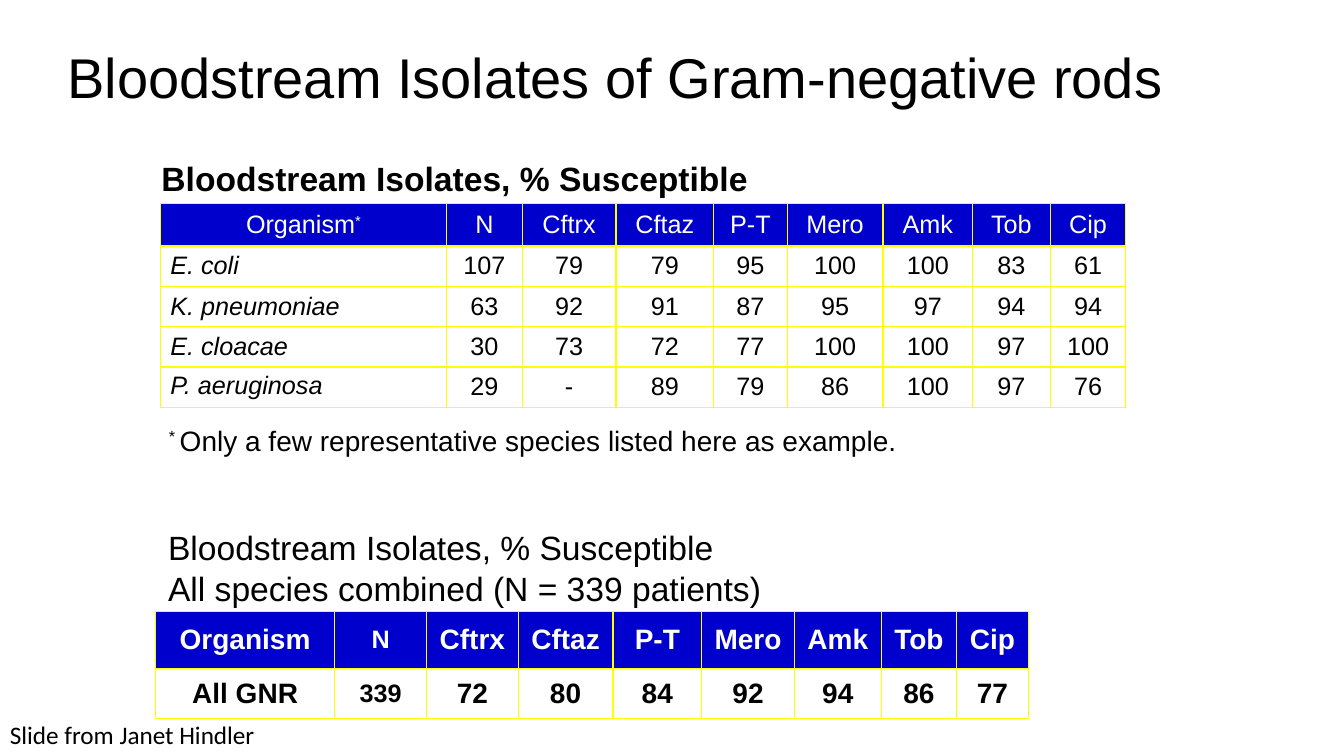
from dataclasses import dataclass

from pptx import Presentation
from pptx.dml.color import RGBColor
from pptx.enum.text import MSO_ANCHOR as Anchor, MSO_AUTO_SIZE as AutoSize, PP_ALIGN as Align
from pptx.oxml import parse_xml
from pptx.oxml.ns import nsdecls
from pptx.util import Pt


@dataclass(frozen=True)
class Theme:
    text: str = "000000"
    paper: str = "FFFFFF"
    header: str = "0000CC"
    border: str = "FFFF00"
    font: str = "Arial"
    credit_font: str = "Calibri"
    title_size: int = 40
    heading_size: int = 24
    large_size: int = 20
    normal_size: int = 18


DRUGS = ["Cftrx", "Cftaz", "P-T", "Mero", "Amk", "Tob", "Cip"]
SPECIES_ROWS = [
    ["Organism", "N", *DRUGS],
    ["E. coli", "107", "79", "79", "95", "100", "100", "83", "61"],
    ["K. pneumoniae", "63", "92", "91", "87", "95", "97", "94", "94"],
    ["E. cloacae", "30", "73", "72", "77", "100", "100", "97", "100"],
    ["P. aeruginosa", "29", "-", "89", "79", "86", "100", "97", "76"],
]
COMBINED_ROWS = [
    ["Organism", "N", *DRUGS],
    ["All GNR", "339", "72", "80", "84", "92", "94", "86", "77"],
]
SPECIES_WIDTHS = [204.5, 54, 67, 69.8, 52.6, 68.4, 64, 55.5, 54]
COMBINED_WIDTHS = [128.2, 65.5, 65.5, 67.7, 63.4, 66.2, 62, 54, 51.1]


def add_text(paragraph, text, *, size, font, color, bold=False, italic=False, raised=False):
    run = paragraph.add_run()
    run.text = text
    run.font.size = Pt(size)
    run.font.name = font
    run.font.bold = bold
    run.font.italic = italic
    run.font.color.rgb = RGBColor.from_string(color)
    if raised:
        run.font._element.set("baseline", "30000")


class SlideBuilder:
    def __init__(self, slide, theme):
        self.slide = slide
        self.theme = theme

    def style(self, size, **changes):
        return {"size": size, "font": self.theme.font, "color": self.theme.text, **changes}

    def title(self, text, left, top, width, height):
        shape = self.slide.shapes.title
        shape.left, shape.top, shape.width, shape.height = map(Pt, (left, top, width, height))
        frame = shape.text_frame
        frame.word_wrap = True
        frame.auto_size = AutoSize.NONE
        frame.vertical_anchor = Anchor.TOP
        paragraph = frame.paragraphs[0]
        paragraph.alignment = Align.LEFT
        paragraph.line_spacing = 1.0
        add_text(paragraph, text, **self.style(self.theme.title_size))

    def text_box(self, lines, left, top, width, height, size, align=Align.LEFT, wrap=False, mark="", **changes):
        shape = self.slide.shapes.add_textbox(Pt(left), Pt(top), Pt(width), Pt(height))
        frame = shape.text_frame
        frame.word_wrap = wrap
        frame.auto_size = AutoSize.SHAPE_TO_FIT_TEXT
        for index, line in enumerate(lines):
            paragraph = frame.add_paragraph() if index else frame.paragraphs[0]
            paragraph.alignment = align
            if mark:
                add_text(paragraph, mark, **self.style(size, raised=True, **changes))
            add_text(paragraph, line, **self.style(size, **changes))

    def border(self, cell):
        properties = cell._tc.get_or_add_tcPr()
        for index, side in enumerate(("lnL", "lnR", "lnT", "lnB")):
            properties.insert(index, parse_xml(
                f'<a:{side} {nsdecls("a")} w="{Pt(1)}"><a:solidFill>'
                f'<a:srgbClr val="{self.theme.border}"/></a:solidFill></a:{side}>'))

    def table(self, rows, left, top, widths, heights, text_style):
        shape = self.slide.shapes.add_table(
            len(rows), len(widths), Pt(left), Pt(top), Pt(sum(widths)), Pt(sum(heights)))
        table = shape.table
        table.first_row = table.horz_banding = False
        for column, width in zip(table.columns, widths):
            column.width = Pt(width)
        for row, height in zip(table.rows, heights):
            row.height = Pt(height)
        for row_index, values in enumerate(rows):
            for column_index, value in enumerate(values):
                cell = table.cell(row_index, column_index)
                is_header = row_index == 0
                cell.vertical_anchor = Anchor.MIDDLE
                cell.fill.solid()
                cell.fill.fore_color.rgb = RGBColor.from_string(
                    self.theme.header if is_header else self.theme.paper)
                self.border(cell)
                paragraph = cell.text_frame.paragraphs[0]
                changes = text_style(row_index, column_index)
                paragraph.alignment = Align.LEFT if changes.get("italic") else Align.CENTER
                if is_header:
                    changes["color"] = self.theme.paper
                add_text(paragraph, value, **self.style(**changes))
        return table


def main():
    theme = Theme()
    presentation = Presentation()
    presentation.slide_width, presentation.slide_height = Pt(960), Pt(540)
    slide = presentation.slides.add_slide(presentation.slide_layouts[5])
    builder = SlideBuilder(slide, theme)

    def species_style(row, column):
        return {"size": theme.normal_size, "italic": row > 0 and column == 0}

    def combined_style(row, column):
        return {"size": theme.normal_size if column == 1 else theme.large_size, "bold": True}

    builder.title("Bloodstream Isolates of Gram-negative rods", 41, 26.6, 823, 55.4)
    species = builder.table(SPECIES_ROWS, 114.5, 145.5, SPECIES_WIDTHS, [30.2] + [28.8] * 4, species_style)
    add_text(species.cell(0, 0).text_frame.paragraphs[0], "*",
             **builder.style(theme.normal_size, color=theme.paper, raised=True))
    species.cell(4, 0).text_frame.paragraphs[0].line_spacing = 0.85
    builder.text_box(["Only a few representative species listed here as example. "],
                     111, 298.8, 545, 31.7, theme.large_size, Align.CENTER, mark="* ")
    builder.text_box(["Bloodstream Isolates, % Susceptible"],
                     99.4, 109.4, 450.7, 36, theme.heading_size, Align.CENTER, bold=True)
    builder.text_box(["Bloodstream Isolates, % Susceptible", "All species combined (N = 339 patients)"],
                     113, 373, 484.6, 65.5, theme.heading_size, wrap=True)
    builder.table(COMBINED_ROWS, 111, 436.5, COMBINED_WIDTHS, [41, 36], combined_style)
    builder.text_box(["Slide from Janet Hindler"], 0, 510.5, 191.5, 28.8,
                     theme.normal_size, font=theme.credit_font)
    presentation.save("out.pptx")


if __name__ == "__main__":
    main()
